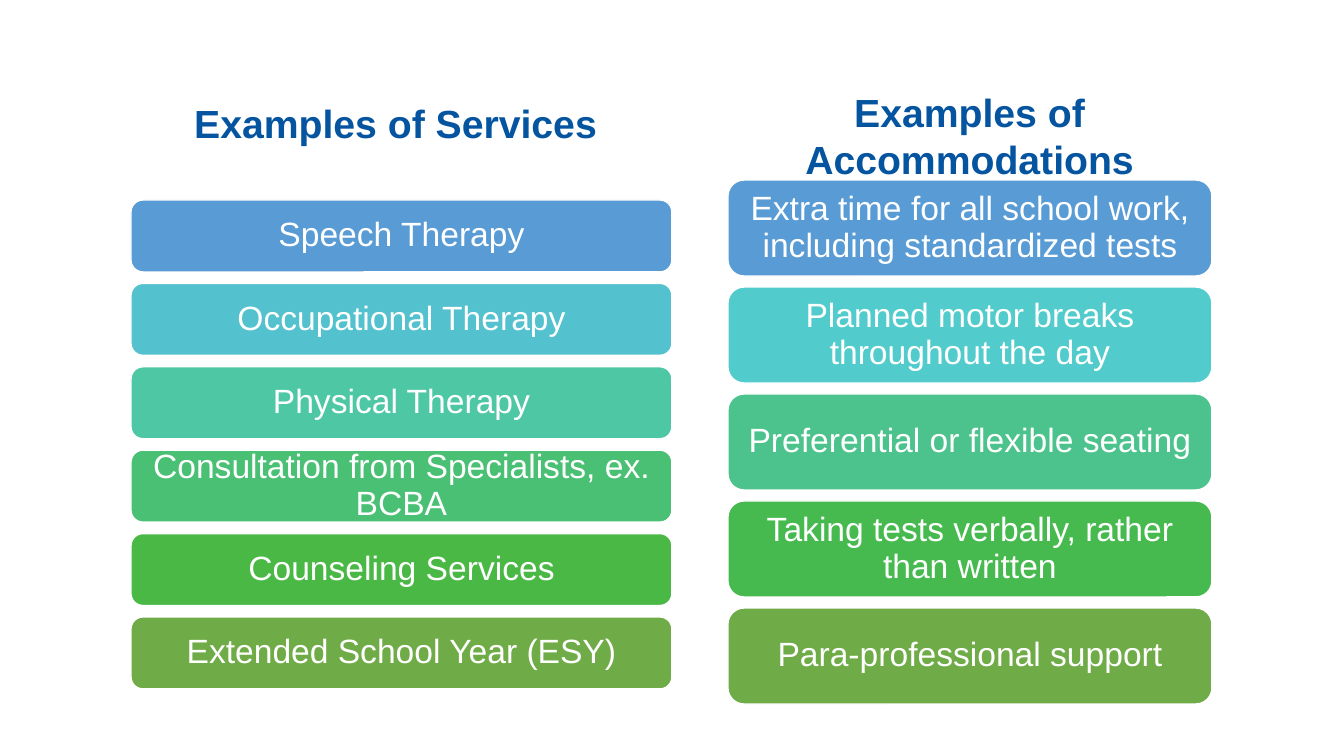
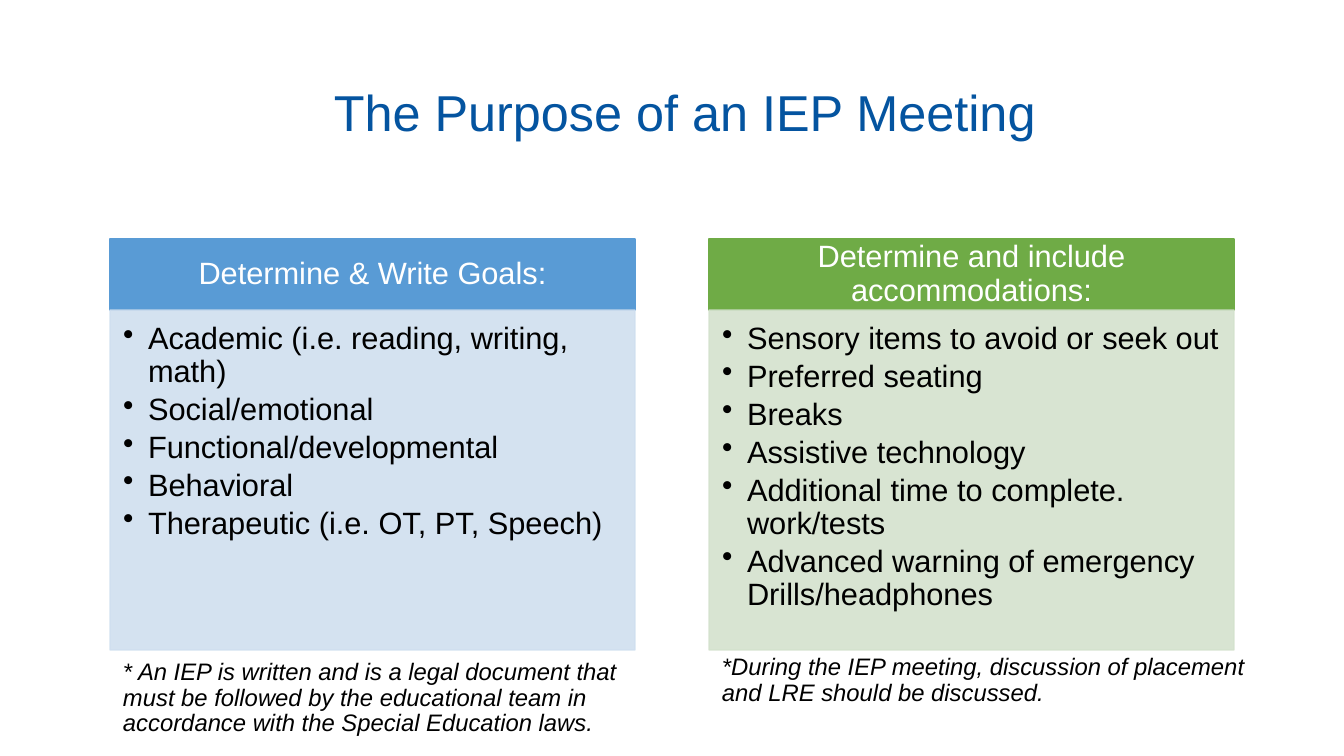
import lxml.etree
import pptx
import pptx.dml.color
import pptx.enum.shapes
import pptx.enum.text
import pptx.oxml.ns
import pptx.util

PX = 914400 / 100.8
FONT = "Arial"
COLORS = {
    "title": "0454A0", "white": "FFFFFF", "black": "000000",
    "blue": "599BD5", "green": "6FAB46",
    "pale blue": "CFDEEF", "pale green": "D3E1CC",
    "cyan": "53C1CE", "teal": "4EC7A5", "emerald": "49C073", "leaf": "49B845",
    "aqua": "52CBCC", "mint": "4CC38C", "grass": "46BA4E",
}
SHAPES = pptx.enum.shapes.MSO_SHAPE
ALIGN = pptx.enum.text.PP_ALIGN
ANCHOR = pptx.enum.text.MSO_ANCHOR
qn = pptx.oxml.ns.qn


def place(page, kind, left, top, width, height, fill=None, line=None):
    """Add a preset shape, or a text box when kind is None; lengths in px."""
    frame = [round(length * PX) for length in (left, top, width, height)]
    if kind is None:
        return page.shapes.add_textbox(*frame)
    shape = page.shapes.add_shape(kind, *frame)
    shape.shadow.inherit = False
    shape.fill.solid()
    shape.fill.fore_color.rgb = pptx.dml.color.RGBColor.from_string(COLORS[fill])
    shape.line.color.rgb = pptx.dml.color.RGBColor.from_string(COLORS[line or fill])
    shape.line.width = pptx.util.Pt(1)
    return shape


def write(box, lines, size, color, align=ALIGN.CENTER, anchor=ANCHOR.MIDDLE,
          inset=(10, 0), spacing=0.9, bold=False, italic=False, bullet=False):
    """Fill a shape with one paragraph per line; inset is (sides, top and bottom) in px."""
    frame = box.text_frame
    frame.word_wrap = True
    frame.auto_size = pptx.enum.text.MSO_AUTO_SIZE.NONE
    frame.vertical_anchor = anchor
    frame.margin_left = frame.margin_right = round(inset[0] * PX)
    frame.margin_top = frame.margin_bottom = round(inset[1] * PX)
    for index, line in enumerate(lines):
        para = frame.add_paragraph() if index else frame.paragraphs[0]
        para.alignment = align
        para.line_spacing = spacing
        para.space_before = pptx.util.Pt(3.3 if index else 0)
        if bullet:
            properties = para._p.get_or_add_pPr()
            properties.set("marL", str(round(25 * PX)))
            properties.set("indent", str(round(-25 * PX)))
            lxml.etree.SubElement(properties, qn("a:buChar"), char="•")
        span = para.add_run()
        span.text = line
        span.font.name = FONT
        span.font.size = pptx.util.Pt(size)
        span.font.bold = bold
        span.font.italic = italic
        span.font.color.rgb = pptx.dml.color.RGBColor.from_string(COLORS[color])


deck = pptx.Presentation()
deck.slide_width = round(1344 * PX)
deck.slide_height = round(756 * PX)
title_only, blank = deck.slide_layouts[5], deck.slide_layouts[6]

# Services and accommodations: two stacks of rounded bars
page = deck.slides.add_slide(blank)
stacks = [
    ("Examples of Services", (117, 94, 557, 72), (131, 200, 541, 72), 689, [
        ("Speech Therapy", "blue"),
        ("Occupational Therapy", "cyan"),
        ("Physical Therapy", "teal"),
        ("Consultation from Specialists, ex. BCBA", "emerald"),
        ("Counseling Services", "leaf"),
        ("Extended School Year (ESY)", "green"),
    ]),
    ("Examples of Accommodations", (703, 83, 533, 72), (728, 180, 484, 96), 704, [
        ("Extra time for all school work, including standardized tests", "blue"),
        ("Planned motor breaks throughout the day", "aqua"),
        ("Preferential or flexible seating", "mint"),
        ("Taking tests verbally, rather than written", "grass"),
        ("Para-professional support", "green"),
    ]),
]
for heading, heading_frame, (left, top, width, height), bottom, bars in stacks:
    write(place(page, None, *heading_frame), [heading], 28, "title",
          anchor=ANCHOR.TOP, inset=(10, 5), spacing=1.0, bold=True)
    pitch = (bottom - top - height) / (len(bars) - 1)
    for index, (label, color) in enumerate(bars):
        bar = place(page, SHAPES.ROUNDED_RECTANGLE, left, top + index * pitch,
                    width, height, color, "white")
        write(bar, [label], 24, "white")

# Purpose of the meeting: two columns with a header, a list and a note
page = deck.slides.add_slide(title_only)
title = page.shapes.title
title.left, title.top, title.width, title.height = [
    round(length * PX) for length in (148, 68, 1074, 86)]
write(title, ["The Purpose of an IEP Meeting"], 36, "title", spacing=1.0)

columns = [
    (110, "blue", "Determine & Write Goals:", [
        "Academic (i.e. reading, writing, math)",
        "Social/emotional",
        "Functional/developmental",
        "Behavioral",
        "Therapeutic (i.e. OT, PT, Speech)",
    ], (660, 500, 78),
        "* An IEP is written and is a legal document that must be followed by "
        "the educational team in accordance with the Special Education laws."),
    (709, "green", "Determine and include accommodations:", [
        "Sensory items to avoid or seek out",
        "Preferred seating",
        "Breaks",
        "Assistive technology",
        "Additional time to complete. work/tests",
        "Advanced warning of emergency Drills/headphones",
    ], (655, 530, 52),
        "*During the IEP meeting, discussion of placement and LRE should be discussed."),
]
for left, color, heading, items, (note_top, note_width, note_height), note in columns:
    header = place(page, SHAPES.RECTANGLE, left, 239, 525, 71, color)
    write(header, [heading], 22, "white", inset=(17, 0))
    panel = place(page, SHAPES.RECTANGLE, left, 310, 525, 340, "pale " + color)
    for tint in panel._element.spPr.iter(qn("a:srgbClr")):
        lxml.etree.SubElement(tint, qn("a:alpha"), val="88000")
    write(panel, items, 22, "black", ALIGN.LEFT, ANCHOR.TOP, inset=(13, 13), bullet=True)
    note_box = place(page, None, left + 13, note_top, note_width, note_height)
    write(note_box, [note], 17, "black", ALIGN.LEFT, ANCHOR.TOP, inset=(0, 0), italic=True)

deck.save("out.pptx")
